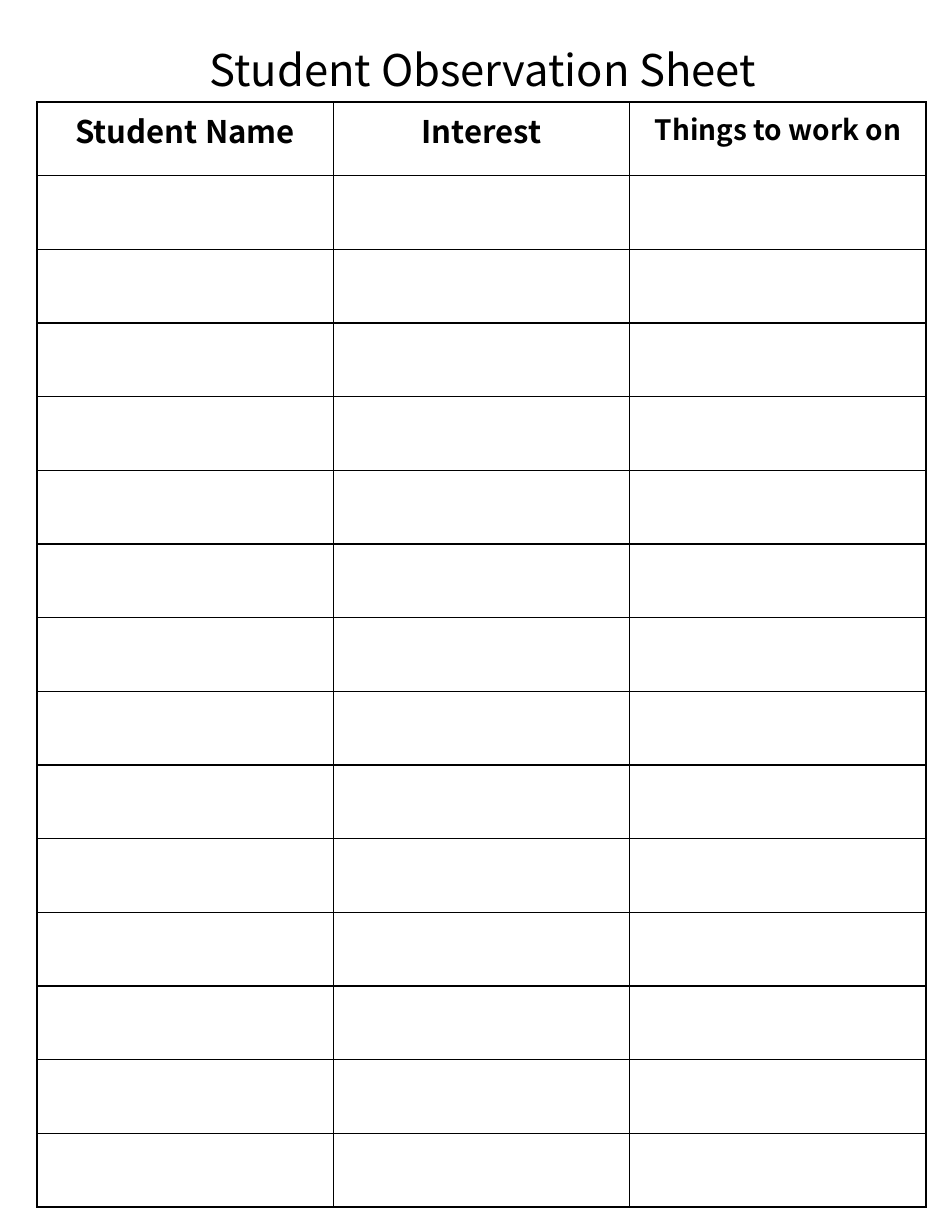
from dataclasses import dataclass

from lxml.etree import SubElement
from pptx import Presentation
from pptx.dml.color import RGBColor
from pptx.enum.text import MSO_ANCHOR, MSO_AUTO_SIZE, PP_ALIGN
from pptx.oxml.ns import qn
from pptx.util import Inches, Pt


@dataclass(frozen=True)
class Theme:
    font: str = "Noto Sans CJK JP"
    ink: RGBColor = RGBColor(0, 0, 0)
    paper: RGBColor = RGBColor(255, 255, 255)
    title: Pt = Pt(28)
    heading: Pt = Pt(20)
    small_heading: Pt = Pt(18)
    rule: Pt = Pt(1)


theme = Theme()


def style_paragraph(paragraph, size, bold):
    paragraph.alignment = PP_ALIGN.CENTER
    for run in paragraph.runs:
        run.font.name = theme.font
        run.font.size = size
        run.font.bold = bold
        run.font.color.rgb = theme.ink


def add_borders(cell):
    """Rule all four sides; borders must precede the fill in the cell XML."""
    properties = cell._tc.get_or_add_tcPr()
    for side in ("a:lnL", "a:lnR", "a:lnT", "a:lnB"):
        line = SubElement(properties, qn(side), w=str(theme.rule))
        fill = SubElement(line, qn("a:solidFill"))
        SubElement(fill, qn("a:srgbClr"), val=str(theme.ink))


prs = Presentation()
prs.slide_width, prs.slide_height = Inches(8.5), Inches(11)
slide = prs.slides.add_slide(prs.slide_layouts[5])

title = slide.shapes.title
title.left, title.top = Inches(1.09), Inches(0)
title.width, title.height = Inches(6.44), Inches(0.91)
title.text_frame.text = "Student Observation Sheet"
title.text_frame.auto_size = MSO_AUTO_SIZE.NONE
title.text_frame.vertical_anchor = MSO_ANCHOR.BOTTOM
title.text_frame.paragraphs[0].line_spacing = 0.9
style_paragraph(title.text_frame.paragraphs[0], theme.title, False)

headings = [
    ("Student Name", theme.heading),
    ("Interest", theme.heading),
    ("Things to work on", theme.small_heading),
]
row_count = 15
observations = slide.shapes.add_table(
    row_count, len(headings),
    Inches(0.33), Inches(0.91), Inches(7.94), Inches(9.87),
).table
observations.first_row = False
observations.horz_banding = False

for cell in observations.iter_cells():
    add_borders(cell)
    cell.fill.solid()
    cell.fill.fore_color.rgb = theme.paper

for column, (heading, size) in enumerate(headings):
    heading_text = observations.cell(0, column).text_frame
    heading_text.text = heading
    style_paragraph(heading_text.paragraphs[0], size, True)

prs.save("out.pptx")
